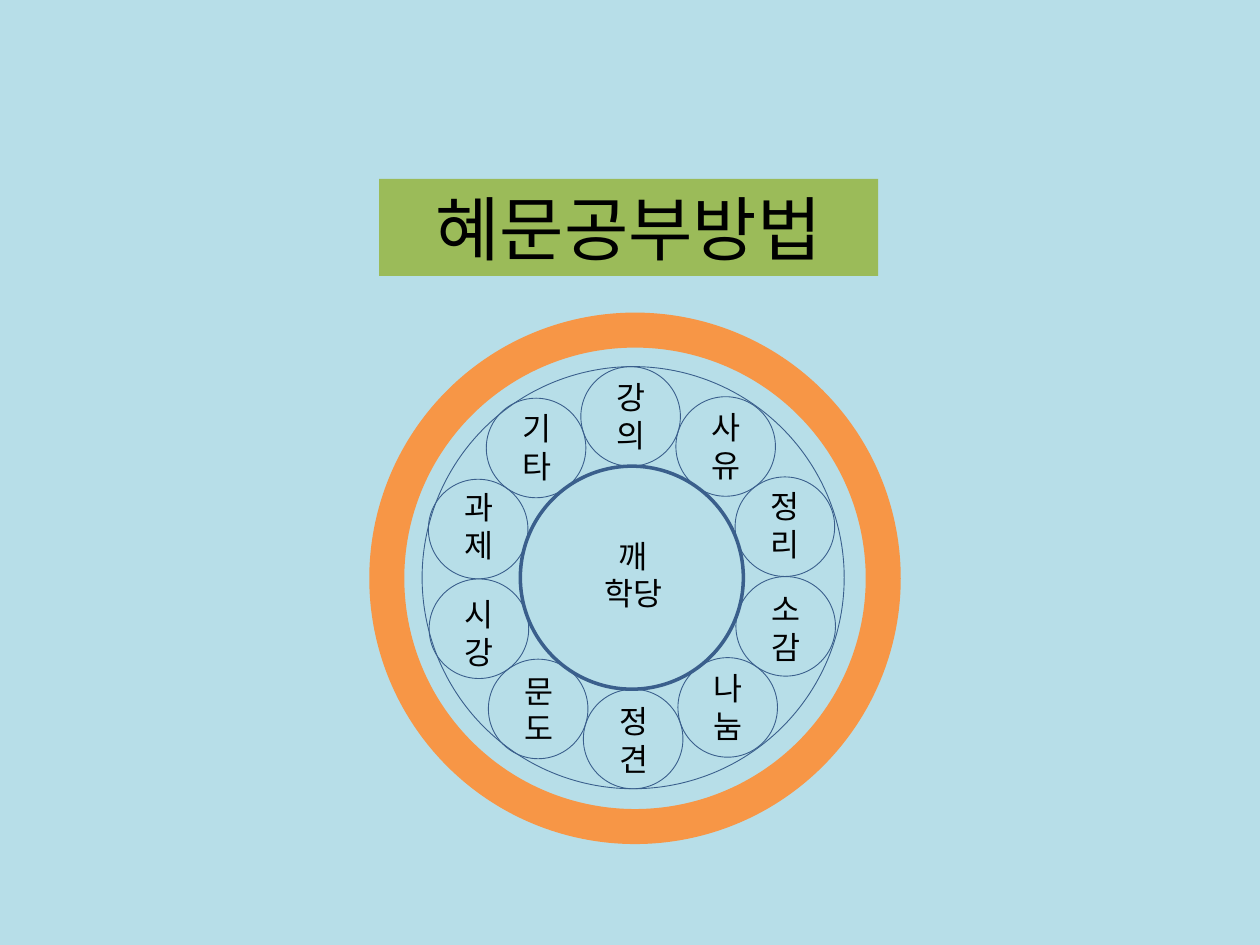
import math
import pptx
import pptx.dml.color
import pptx.enum.shapes
import pptx.enum.text
import pptx.oxml.ns
import pptx.util
from lxml import etree

FONT = "Noto Sans CJK KR"
CENTER = pptx.enum.text.PP_ALIGN.CENTER
LEFT = pptx.enum.text.PP_ALIGN.LEFT
OVAL = pptx.enum.shapes.MSO_SHAPE.OVAL
rgb = pptx.dml.color.RGBColor.from_string

prs = pptx.Presentation()
prs.slide_width, prs.slide_height = pptx.util.Inches(10), pptx.util.Inches(7.5)
cell = prs.slide_width / 100
s = prs.slides.add_slide(prs.slide_layouts[5])
s.background.fill.solid()
s.background.fill.fore_color.rgb = rgb("B7DEE8")


def write(sp, text, size, align):
    tf = sp.text_frame
    tf.text = text
    frame = {"word_wrap": True, "auto_size": pptx.enum.text.MSO_AUTO_SIZE.NONE}
    for key, value in frame.items():
        setattr(tf, key, value)
    for p in tf.paragraphs:
        p.alignment = align
        for r in p.runs:
            for key, value in {"size": pptx.util.Pt(size), "name": FONT}.items():
                setattr(r.font, key, value)
            r.font.color.rgb = rgb("000000")
            ea = etree.SubElement(r.font._element, pptx.oxml.ns.qn("a:ea"))
            ea.set("typeface", FONT)


def ring(shapes, cx, cy, w, h, color, weight):
    box = [round(v * cell) for v in (cx - w / 2, cy - h / 2, w, h)]
    sp = shapes.add_shape(OVAL, *box)
    sp.shadow.inherit = False
    sp.fill.background()
    sp.line.color.rgb = rgb(color)
    sp.line.width = pptx.util.Pt(weight)


title = s.shapes.title
for key, value in {"left": 30.1, "top": 14.2, "width": 39.6, "height": 7.7}.items():
    setattr(title, key, round(value * cell))
title.fill.solid()
title.fill.fore_color.rgb = rgb("9BBB59")
title.text_frame.vertical_anchor = pptx.enum.text.MSO_ANCHOR.MIDDLE
write(title, "혜문공부방법", 40, CENTER)

rings = [
    (50.15, 45.85, 17.7, 17.7, "3A5F8C", 2),
    (50.25, 45.85, 33.5, 33.5, "3A5F8C", 0.5),
    (50, 45.85, 37.8, 37.1, "B7DEE8", 12),
    (50.4, 45.9, 39.4, 39.4, "F79646", 20),
]
for spec_row in rings[:3]:
    ring(s.shapes, *spec_row)

hub = s.shapes.add_textbox(*[round(v * cell) for v in (44.8, 42.1, 10.9, 7.1)])
write(hub, "깨\n학당", 18, CENTER)

topics = [
    ("강의", 0.4), ("사유", 0.4), ("정리", 0.3), ("소감", 0.6), ("나눔", 0.4),
    ("정견", 0.5), ("문도", 0.5), ("시\n강", 0.8), ("과제", 0.2), ("기타", 0.4),
]
step = 360 / len(topics)
for i, (topic, drop) in enumerate(topics):
    angle = math.radians(i * step - 0.45)
    cx = 50.15 + 12.8 * math.sin(angle)
    cy = 45.85 - 12.8 * math.cos(angle)
    group = s.shapes.add_group_shape()
    ring(group.shapes, cx, cy, 7.9, 7.9, "3A5F8C", 0.5)
    box = [round(v * cell) for v in (cx - 2.1, cy - 3.95 + drop, 4.2, 7.1)]
    write(group.shapes.add_textbox(*box), topic, 18, LEFT)

ring(s.shapes, *rings[3])

prs.save("out.pptx")
